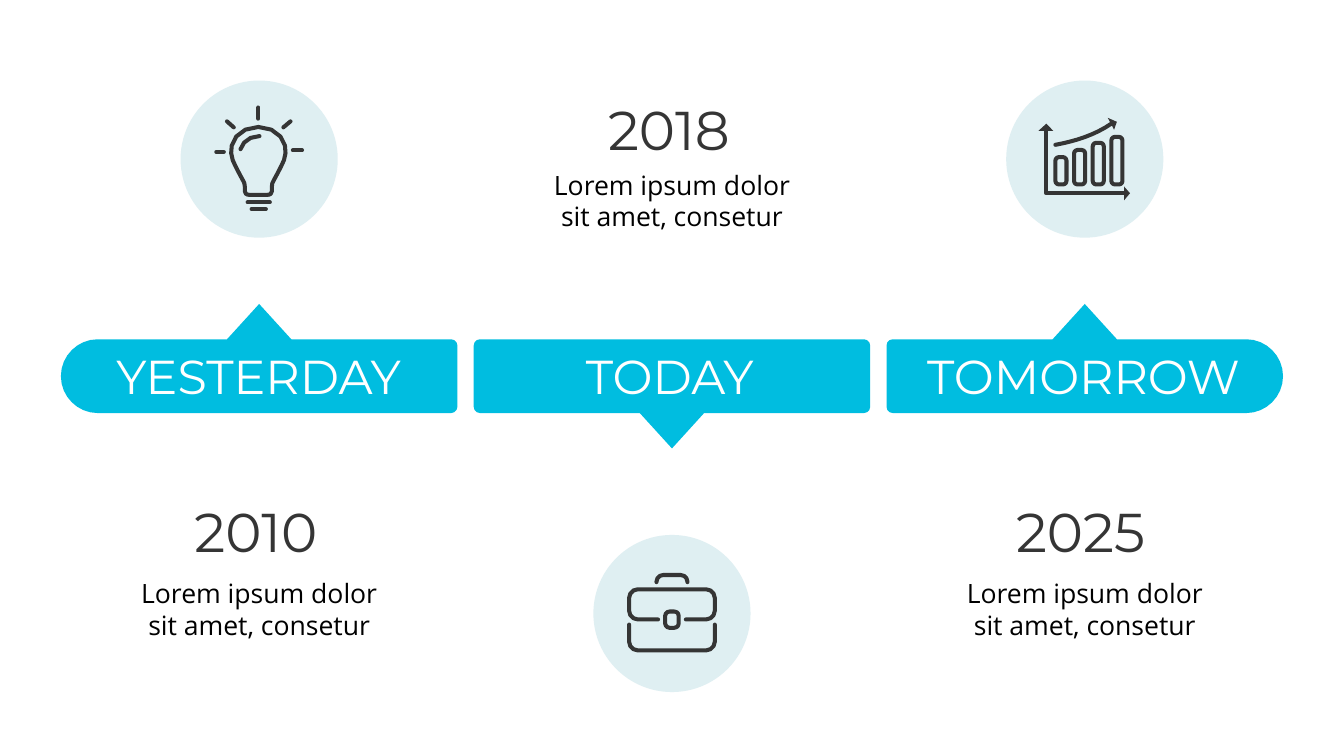
import pptx
import pptx.dml.color
import pptx.enum.shapes
import pptx.enum.text
import pptx.oxml.ns
import pptx.util

Cm, Pt = pptx.util.Cm, pptx.util.Pt

# Content; label and year boxes are (left, width) in cm
COLORS = {"bar": "00BDE0", "disc": "DFEFF2", "ink": "353535", "white": "FFFFFF", "black": "000000"}
BODY = "Lorem ipsum dolor sit amet, consetur"
STAGES = [
    {"label": "YESTERDAY", "label_box": (2.93, 7.32), "year": "2010", "year_box": (4.9, 4.04),
     "icon": "bulb", "points_up": True, "round_end": "left"},
    {"label": "TODAY", "label_box": (14.76, 4.32), "year": "2018", "year_box": (15.32, 3.96),
     "icon": "briefcase", "points_up": False, "round_end": None},
    {"label": "TOMORROW", "label_box": (23.36, 8), "year": "2025", "year_box": (25.6, 4.17),
     "icon": "chart", "points_up": True, "round_end": "right"},
]

# Layout in cm
MIDDLE_X, PITCH = 16.93, 10.4
BAR_TOP, BAR_WIDTH, BAR_HEIGHT = 8.55, 9.99, 1.86
TIP_HALF, TIP_HEIGHT = 0.81, 0.89
DISC_SIZE = 3.96
PLACES = {  # by pointer direction: disc centre, year top, text top
    True: (4.01, 12.55, 14.41),
    False: (15.46, 2.41, 4.12),
}

deck = pptx.Presentation()
deck.slide_width, deck.slide_height = Cm(33.86), Cm(19.05)
page = deck.slides.add_slide(deck.slide_layouts[6])


def rgb(name):
    return pptx.dml.color.RGBColor.from_string(COLORS[name])


# Geometry
def cubic(a, b, c, d):
    steps = 8 if max(abs(d[0] - a[0]), abs(d[1] - a[1])) > 0.7 else 3
    points = []
    for step in range(steps + 1):
        t = step / steps
        weights = ((1 - t) ** 3, 3 * t * (1 - t) ** 2, 3 * t * t * (1 - t), t ** 3)
        points.append(tuple(sum(w * p[axis] for w, p in zip(weights, (a, b, c, d))) for axis in (0, 1)))
    return points


def spline(start, *curves):
    points = [start]
    for b, c, d in curves:
        points += cubic(points[-1], b, c, d)[1:]
    return points


def toward(a, b, distance):
    length = ((b[0] - a[0]) ** 2 + (b[1] - a[1]) ** 2) ** 0.5
    return tuple(p + (q - p) * distance / length for p, q in zip(a, b))


def rounded(corners):
    """Turn (x, y, radius) corners into points, each corner rounded by its radius."""
    points = []
    for i, (x, y, radius) in enumerate(corners):
        if not radius:
            points.append((x, y))
            continue
        before, after = corners[i - 1][:2], corners[(i + 1) % len(corners)][:2]
        points += cubic(toward((x, y), before, radius), toward((x, y), before, radius * 0.45),
                        toward((x, y), after, radius * 0.45), toward((x, y), after, radius))
    return points


def rounded_box(left, top, right, bottom, radius):
    return rounded([(left, top, radius), (right, top, radius), (right, bottom, radius), (left, bottom, radius)])


# Drawing: all outlines and lines of one call form a single shape
def draw(origin, outlines, lines=(), fill=None, stroke=None):
    builder = None
    for points, closed in [(o, True) for o in outlines] + [(line, False) for line in lines]:
        places = [(Cm(origin[0] + x), Cm(origin[1] + y)) for x, y in points]
        if builder is None:
            builder = page.shapes.build_freeform(*places[0])
        else:
            builder.move_to(*places[0])
        builder.add_line_segments(places[1:], close=closed)
    shape = builder.convert_to_shape()
    shape.shadow.inherit = False
    if fill:
        shape.fill.solid()
        shape.fill.fore_color.rgb = rgb(fill)
    else:
        shape.fill.background()
    if stroke:
        shape.line.color.rgb = rgb(stroke)
        shape.line.width = Pt(2.9)
        shape._element.spPr.find(pptx.oxml.ns.qn("a:ln")).set("cap", "rnd")
    else:
        shape.line.fill.background()


def write(text, left, top, width, height, size, font, color, centered=False):
    box = page.shapes.add_textbox(Cm(left), Cm(top), Cm(width), Cm(height))
    frame = box.text_frame
    frame.word_wrap = centered
    frame.auto_size = pptx.enum.text.MSO_AUTO_SIZE.SHAPE_TO_FIT_TEXT
    para = frame.paragraphs[0]
    if centered:
        para.alignment = pptx.enum.text.PP_ALIGN.CENTER
    else:
        frame.margin_left = frame.margin_right = frame.margin_top = frame.margin_bottom = 0
    span = para.add_run()
    span.text = text
    span.font.size, span.font.name = Pt(size), font
    span.font.color.rgb = rgb(color)


# Icons: (closed outlines, open lines, solid heads), in cm from the disc centre
def bulb():
    half = spline((0, -0.81),
                  ((0.37, -0.81), (0.62, -0.58), (0.67, -0.34)),
                  ((0.72, -0.15), (0.65, 0.05), (0.58, 0.17)),
                  ((0.5, 0.33), (0.45, 0.42), (0.38, 0.55)),
                  ((0.34, 0.61), (0.34, 0.66), (0.34, 0.81)),
                  ((0.32, 0.9), (0.28, 0.9), (0.22, 0.9)))
    glass = [(x - 0.02, y) for x, y in half + [(-x, y) for x, y in reversed(half[1:])]]
    glare = spline((-0.47, -0.25), ((-0.42, -0.43), (-0.24, -0.58), (0.01, -0.58)))
    rays = [[(-0.02, -1.3), (-0.02, -1.02)], [(-1.08, -0.18), (-0.89, -0.18)],
            [(0.85, -0.22), (1.08, -0.22)], [(-0.81, -0.95), (-0.64, -0.8)],
            [(0.79, -0.95), (0.61, -0.8)]]
    base = [[(-0.29, 1.09), (0.27, 1.09)], [(-0.19, 1.26), (0.17, 1.26)]]
    return [glass], [glare] + rays + base, []


def briefcase():
    clasp = rounded_box(-0.17, -0.05, 0.17, 0.36, 0.11)
    upper = rounded([(-0.35, 0.15, 0), (-1.08, 0.15, 0.22), (-1.08, -0.61, 0.22),
                     (1.08, -0.61, 0.22), (1.08, 0.15, 0.22), (0.35, 0.15, 0)])
    lower = rounded([(-1.08, 0.28, 0), (-1.08, 0.93, 0.22), (1.08, 0.93, 0.22), (1.08, 0.28, 0)])
    handle = rounded([(-0.39, -0.79, 0), (-0.39, -0.97, 0.17), (0.39, -0.97, 0.17), (0.39, -0.79, 0)])
    return [clasp], [upper, lower, handle], []


def chart():
    columns = [rounded_box(-0.74 + 0.47 * i, top, -0.46 + 0.47 * i, 0.64, 0.09)
               for i, top in enumerate((-0.05, -0.23, -0.41, -0.56))]
    axes = [(-0.97, -0.75), (-0.97, 0.86), (1.02, 0.86)]
    trend = spline((-0.74, -0.36), ((-0.25, -0.45), (0.25, -0.6), (0.68, -0.9)))
    heads = [[(-1.17, -0.71), (-0.97, -0.89), (-0.79, -0.71)],
             [(0.99, 0.69), (1.14, 0.86), (0.99, 1.04)],
             [(0.58, -1.04), (0.81, -0.94), (0.74, -0.74)]]
    return columns, [axes, trend], heads


ICONS = {"bulb": bulb, "briefcase": briefcase, "chart": chart}

for i, stage in enumerate(STAGES):
    center = MIDDLE_X + (i - 1) * PITCH
    disc_y, year_top, body_top = PLACES[stage["points_up"]]

    # Bar with pointer
    half = BAR_WIDTH / 2
    left_radius, right_radius = (BAR_HEIGHT / 2 if stage["round_end"] == side else 0.16
                                 for side in ("left", "right"))
    top_edge = [(-half, 0, left_radius), (half, 0, right_radius)]
    bottom_edge = [(half, BAR_HEIGHT, right_radius), (-half, BAR_HEIGHT, left_radius)]
    if stage["points_up"]:
        top_edge[1:1] = [(-TIP_HALF, 0, 0), (0, -TIP_HEIGHT, 0), (TIP_HALF, 0, 0)]
    else:
        bottom_edge[1:1] = [(TIP_HALF, BAR_HEIGHT, 0), (0, BAR_HEIGHT + TIP_HEIGHT, 0),
                            (-TIP_HALF, BAR_HEIGHT, 0)]
    draw((center, BAR_TOP), [rounded(top_edge + bottom_edge)], fill="bar")

    # Disc and icon
    disc = page.shapes.add_shape(pptx.enum.shapes.MSO_SHAPE.OVAL, Cm(center - DISC_SIZE / 2),
                                 Cm(disc_y - DISC_SIZE / 2), Cm(DISC_SIZE), Cm(DISC_SIZE))
    disc.shadow.inherit = False
    disc.fill.solid()
    disc.fill.fore_color.rgb = rgb("disc")
    disc.line.fill.background()
    outlines, lines, heads = ICONS[stage["icon"]]()
    draw((center, disc_y), outlines, lines, stroke="ink")
    if heads:
        draw((center, disc_y), heads, fill="ink")

    # Texts
    label_left, label_width = stage["label_box"]
    year_left, year_width = stage["year_box"]
    write(stage["label"], label_left, 8.74, label_width, 1.45, 34, "Montserrat", "white")
    write(stage["year"], year_left, year_top, year_width, 2.03, 39, "Montserrat", "ink")
    write(BODY, center - 3.34, body_top, 6.68, 1.88, 19, "Open Sans", "black", centered=True)

deck.save("out.pptx")
